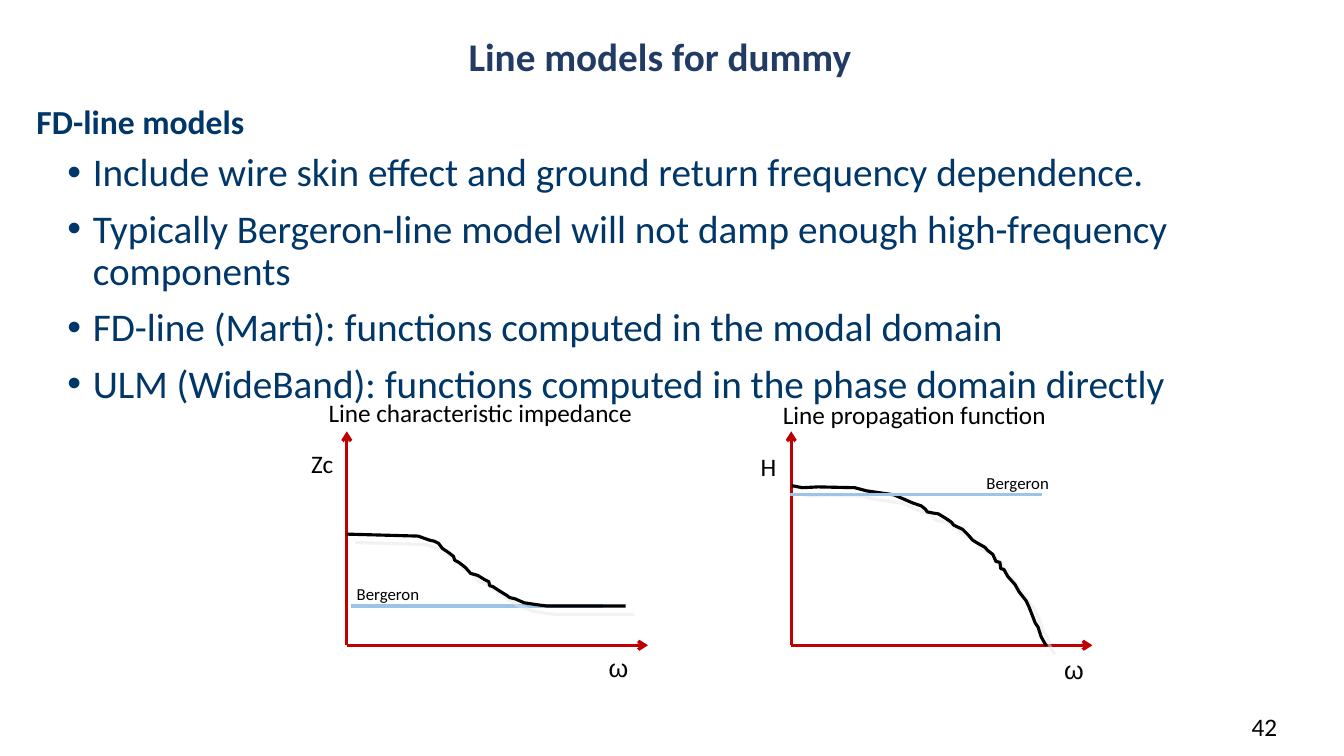
from dataclasses import dataclass
from lxml.etree import SubElement as Sub
from pptx import Presentation as Deck
from pptx.dml.color import RGBColor as Rgb
from pptx.enum.shapes import MSO_CONNECTOR as Link
from pptx.enum.text import MSO_ANCHOR as Anchor, MSO_AUTO_SIZE as Auto
from pptx.oxml.ns import qn
from pptx.util import Cm, Pt

BLACK, NAVY, RED, SKY = "000000", "013668", "C00000", "9DC3E6"
POINTS = [
    "Include wire skin effect and ground return frequency dependence.",
    "Typically Bergeron-line model will not damp enough high-frequency components",
    "FD-line (Marti): functions computed in the modal domain",
    "ULM (WideBand): functions computed in the phase domain directly",
]
FALL = [
    (8.74, 13.46), (10.54, 13.51), (10.82, 13.61), (10.95, 13.64), (11.05, 13.69),
    (11.15, 13.82), (11.3, 13.92), (11.43, 14.02), (11.46, 14.12), (11.56, 14.17),
    (11.73, 14.3), (11.86, 14.45), (12.04, 14.5), (12.22, 14.61), (12.32, 14.66),
    (12.34, 14.76), (12.42, 14.78), (12.57, 14.88), (12.75, 14.99), (12.85, 15.06),
    (12.98, 15.09), (13.21, 15.19), (13.54, 15.24), (13.77, 15.27), (15.77, 15.27),
]
DROP = [
    (19.96, 12.24), (20.22, 12.29), (20.62, 12.27), (21.54, 12.29), (21.84, 12.37),
    (22.05, 12.4), (22.53, 12.47), (22.76, 12.57), (22.99, 12.67), (23.22, 12.75),
    (23.32, 12.83), (23.37, 12.9), (23.52, 12.93), (23.65, 12.95), (23.83, 13.06),
    (23.98, 13.16), (24.03, 13.23), (24.26, 13.34), (24.41, 13.49), (24.51, 13.61),
    (24.64, 13.69), (24.82, 13.79), (24.89, 13.87), (25.02, 13.97), (25.1, 14.15),
    (25.2, 14.17), (25.22, 14.33), (25.3, 14.35), (25.4, 14.53), (25.58, 14.73),
    (25.68, 14.91), (25.86, 15.14), (25.93, 15.29), (26.01, 15.49), (26.09, 15.7),
    (26.16, 15.8), (26.24, 16.05), (26.37, 16.28),
]


@dataclass
class Note:
    lines: list[str]
    left: float
    top: float
    width: float
    height: float = 1.02
    size: int = 18
    color: str = BLACK
    font: str = "Calibri"
    bold: bool = False
    wrap: bool = False
    mid: bool = False
    inset: float = 0.25
    hang: bool = False
    mark: bool = False
    space: float = 1.0


@dataclass
class Line:
    x1: float
    y1: float
    x2: float
    y2: float
    color: str
    arrow: bool = False


@dataclass
class Curve:
    spots: list[tuple[float, float]]


def paint(code: str) -> Rgb:
    return Rgb.from_string(code)


def write(slide, note: Note) -> None:
    box = slide.shapes.add_textbox(Cm(note.left), Cm(note.top), Cm(note.width), Cm(note.height))
    frame = box.text_frame
    frame.word_wrap = note.wrap
    frame.auto_size = Auto.NONE if note.wrap else Auto.SHAPE_TO_FIT_TEXT
    frame.vertical_anchor = Anchor.MIDDLE if note.mid else Anchor.TOP
    frame.margin_left = Cm(note.inset)
    for i, text in enumerate(note.lines):
        para = frame.add_paragraph() if i else frame.paragraphs[0]
        if note.hang:
            props = para._p.get_or_add_pPr()
            props.set("marL", str(Cm(0.64)))
            props.set("indent", str(-Cm(0.64)))
            if note.mark:
                Sub(props, qn("a:buFont"), typeface="Arial")
                Sub(props, qn("a:buChar"), char="•")
        para.line_spacing = note.space
        if i:
            para.space_before = Pt(10)
        run = para.add_run()
        run.text = text
        run.font.name = note.font
        run.font.size = Pt(note.size)
        run.font.bold = note.bold
        run.font.color.rgb = paint(note.color)


def rule(slide, line: Line) -> None:
    ends = [Cm(v) for v in (line.x1, line.y1, line.x2, line.y2)]
    shape = slide.shapes.add_connector(Link.STRAIGHT, *ends)
    shape.line.color.rgb = paint(line.color)
    shape.line.width = Pt(2.25)
    if line.arrow:
        Sub(shape.line._get_or_add_ln(), qn("a:tailEnd"), type="arrow")
    Sub(shape._element.spPr, qn("a:effectLst"))


def trace(slide, curve: Curve) -> None:
    spots = [(Cm(x), Cm(y)) for x, y in curve.spots]
    path = slide.shapes.build_freeform(*spots[0])
    path.add_line_segments(spots[1:], close=False)
    shape = path.convert_to_shape()
    shape.fill.background()
    shape.line.color.rgb = paint(BLACK)
    shape.line.width = Pt(2.25)
    shape.shadow.inherit = False
    glow = shape._element.spPr.find(qn("a:effectLst"))
    shade = Sub(glow, qn("a:outerShdw"), blurRad="0", dist=str(Pt(8.5)),
                dir="2700000", algn="tl", rotWithShape="0")
    tone = Sub(shade, qn("a:srgbClr"), val="E7E6E6")
    Sub(tone, qn("a:alpha"), val="50000")


def main() -> None:
    deck = Deck()
    deck.slide_width, deck.slide_height = Cm(33.87), Cm(19.05)
    slide = deck.slides.add_slide(deck.slide_layouts[6])
    items = [
        Note(["42"], 31.29, 17.81, 1.27),
        Note(POINTS, 1.19, 3.73, 31.47, 14.2, 28, NAVY, wrap=True,
             inset=0.51, hang=True, mark=True, space=0.9),
        Note(["Line models for dummy"], 11.56, 0.48, 11.76, 2.01, 28, "223B64",
             bold=True, wrap=True, mid=True, space=0.9),
        Note(["FD-line models"], 0.41, 2.51, 33.07, 1.19, 24, NAVY, bold=True,
             wrap=True, mid=True, inset=0.51, hang=True, space=0.9),
    ]
    for left in (8.74, 19.94):
        items += [
            Line(left, 16.26, left, 10.87, RED, True),
            Line(left, 16.26, left + 7.59, 16.26, RED, True),
        ]
    items += [
        Note(["Zc"], 7.59, 11.18, 1.22),
        Note(["ω"], 15.09, 16.31, 0.97, font="Arial"),
        Note(["H"], 18.92, 11.25, 0.91),
        Note(["ω"], 26.57, 16.36, 0.97, font="Arial"),
        Curve(DROP),
        Line(8.84, 15.27, 15.19, 15.27, SKY),
        Line(19.91, 12.47, 26.26, 12.47, SKY),
        Note(["Line characteristic impedance"], 8.03, 9.88, 8.25),
        Note(["Line propagation function"], 19.48, 9.93, 7.24),
        Note(["Bergeron"], 8.74, 14.58, 2.11, 0.76, 12),
        Note(["Bergeron"], 24.61, 11.79, 2.11, 0.76, 12),
        Curve(FALL),
    ]
    draw = {Note: write, Line: rule, Curve: trace}
    for item in items:
        draw[type(item)](slide, item)
    deck.save("out.pptx")


if __name__ == "__main__":
    main()
